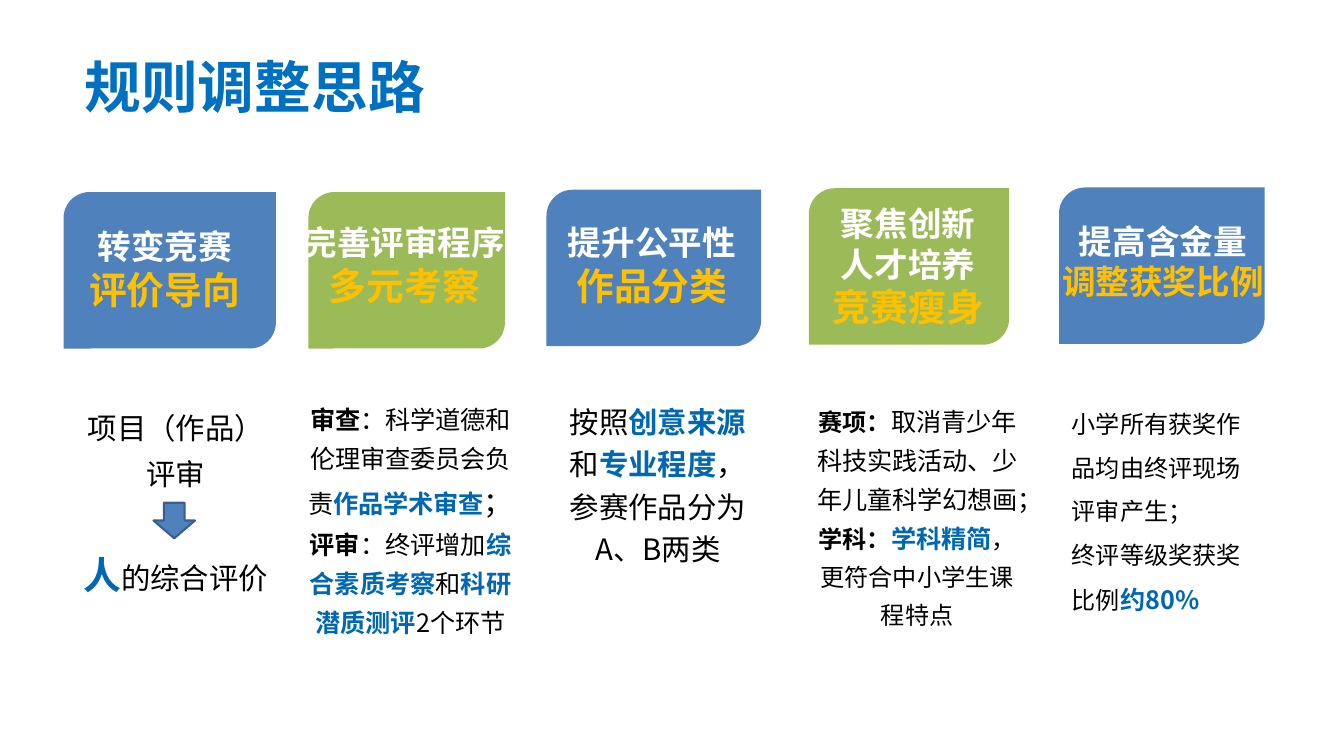
from lxml import etree
from pptx import Presentation
from pptx import util as u
from pptx.dml.color import RGBColor
from pptx.enum import shapes, text
from pptx.oxml.ns import qn

BLUE = RGBColor(0x4F, 0x81, 0xBD)
GREEN = RGBColor(0x9B, 0xBB, 0x59)
EDGE = RGBColor(0x3A, 0x5F, 0x8C)
TITLE = RGBColor(0x00, 0x70, 0xC0)
KEY = RGBColor(0x00, 0x67, 0xB2)
GOLD = RGBColor(0xFF, 0xC0, 0x00)
WHITE = RGBColor(0xFF, 0xFF, 0xFF)
BLACK = RGBColor(0x00, 0x00, 0x00)
MID = text.PP_ALIGN.CENTER
LEFT = text.PP_ALIGN.LEFT


class Deck:
    font = "Noto Sans CJK SC"

    def __init__(self, wide, high):
        self.prs = Presentation()
        self.prs.slide_width = u.Inches(wide)
        self.prs.slide_height = u.Inches(high)
        self.slide = self.prs.slides.add_slide(self.prs.slide_layouts[6])

    def shape(self, kind, box, fill, edge=None):
        item = self.slide.shapes.add_shape(kind, *map(u.Inches, box))
        item.shadow.inherit = False
        item.fill.solid()
        item.fill.fore_color.rgb = fill
        if edge:
            item.line.color.rgb = edge
            item.line.width = u.Pt(2)
        else:
            item.line.fill.background()

    def run(self, para, words, size, color=BLACK, bold=False, gap=0):
        run = para.add_run()
        run.text = words
        run.font.size = u.Pt(size)
        run.font.bold = bold
        run.font.color.rgb = color
        run.font.name = self.font
        props = run._r.get_or_add_rPr()
        etree.SubElement(props, qn("a:ea")).set("typeface", self.font)
        if gap:
            props.set("spc", str(round(gap * 100)))

    def text(self, box, paras, align=MID, pitch=None, wrap=True, lead=None,
             anchor=text.MSO_ANCHOR.TOP):
        """Each para is a list of runs; lead maps a para index to its space before."""
        frame = self.slide.shapes.add_textbox(*map(u.Inches, box)).text_frame
        frame.word_wrap = wrap
        frame.vertical_anchor = anchor
        for i, runs in enumerate(paras):
            para = frame.add_paragraph() if i else frame.paragraphs[0]
            para.alignment = align
            if pitch:
                para.line_spacing = pitch
            if lead and i in lead:
                para.space_before = u.Pt(lead[i])
            for run in runs:
                self.run(para, *run)

    def card(self, box, fill, label, lines, size=36):
        """Coloured panel with white lines and a gold last line."""
        self.shape(shapes.MSO_SHAPE.ROUND_2_DIAG_RECTANGLE, box, fill)
        paras = [[(line, 32, WHITE, True)] for line in lines[:-1]]
        self.text(label, paras + [[(lines[-1], size, GOLD, True)]])


def main():
    deck = Deck(17.78, 10)

    # Title
    deck.text((1.02, 0.67, 16.25, 0.94), [[("规则调整思路", 54, TITLE, True)]],
              align=LEFT, anchor=text.MSO_ANCHOR.MIDDLE)

    # Cards
    high = 2.07
    deck.card((0.84, 2.54, 2.81, high), BLUE, (0.88, 2.94, 2.6, 1.25),
              ["转变竞赛", "评价导向"])
    deck.card((4.08, 2.54, 2.6, high), GREEN, (3.85, 2.89, 3, 1.25),
              ["完善评审程序", "多元考察"])
    deck.card((7.23, 2.51, 2.84, high), BLUE, (7.24, 2.89, 2.77, 1.25),
              ["提升公平性", "作品分类"])
    deck.card((10.7, 2.49, 2.65, high), GREEN, (10.81, 2.64, 2.41, 1.78),
              ["聚焦创新", "人才培养", "竞赛瘦身"])
    deck.card((14.01, 2.48, 2.72, high), BLUE, (13.93, 2.87, 2.91, 1.18),
              ["提高含金量", "调整获奖比例"], size=32)

    # From project review to whole-person review
    deck.text((0.88, 5.24, 2.89, 0.47), [
        [("项目（作品）", 28)],
        [("评审", 28)],
        [("人", 36, KEY, True), ("的综合评价", 28)],
    ], pitch=1.3, wrap=False, lead={2: 44})
    deck.shape(shapes.MSO_SHAPE.DOWN_ARROW, (2.03, 6.65, 0.55, 0.47), BLUE, EDGE)

    # Review steps
    deck.text((3.93, 5.18, 3, 3.42), [
        [("审查", 24, BLACK, True), ("：", 24),
         ("科学道德和伦理审查委员会负责", 24, BLACK, False, -0.2),
         ("作品学术审查", 24, KEY, True, -0.2), ("；", 28)],
        [("评审", 24, BLACK, True), ("：终评增加", 24),
         ("综合素质考察", 24, KEY, True), ("和", 24),
         ("科研潜质测评", 24, KEY, True), ("2个环节", 24)],
    ], pitch=1.3)

    # Classes of work
    deck.text((7.32, 5.2, 2.77, 3.42), [
        [("按照", 28), ("创意来源", 28, KEY, True), ("和", 28),
         ("专业程度", 28, KEY, True), ("，参赛作品分为A、B两类", 28)],
    ], pitch=1.2)

    # Events and subjects
    deck.text((10.7, 5.2, 2.87, 3.42), [
        [("赛项：", 23, BLACK, True),
         ("取消青少年科技实践活动、少年儿童科学幻想画；", 24, BLACK, False, -0.2)],
        [("学科：", 23, BLACK, True), ("学科精简", 24, KEY, True),
         ("，更符合中小学生课程特点", 23)],
    ], pitch=1.3)

    # Award share
    deck.text((14.08, 5.18, 2.66, 3.03), [
        [("小学所有获奖作品均由终评现场评审产生；", 23)],
        [("终评等级奖获奖比例", 23), ("约80%", 24, KEY, True)],
    ], align=LEFT, pitch=1.5)

    deck.prs.save("out.pptx")


if __name__ == "__main__":
    main()
